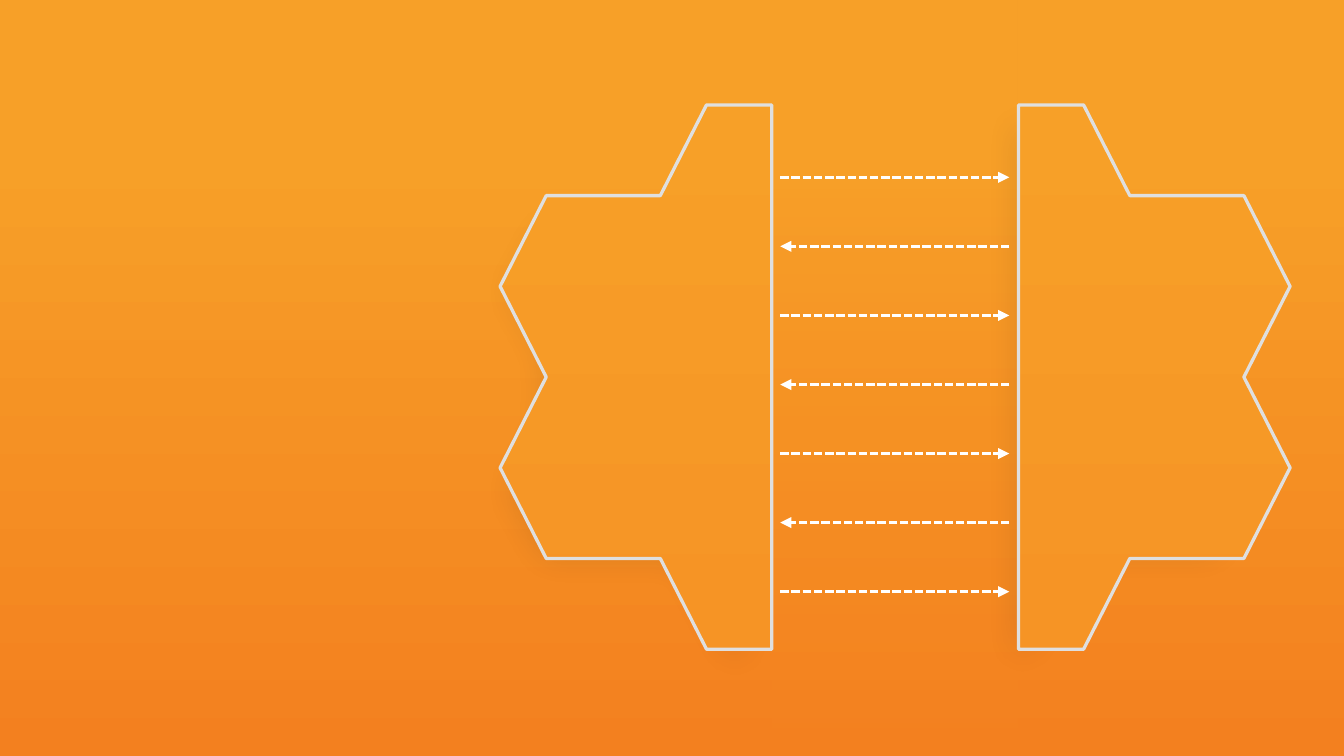
from dataclasses import dataclass

import pptx
import pptx.dml.color
import pptx.enum.dml
import pptx.enum.shapes
import pptx.oxml
import pptx.oxml.ns
import pptx.util

Pt = pptx.util.Pt
qn = pptx.oxml.ns.qn

COLORS = {
    "amber": "F7A028",
    "tangerine": "F69425",
    "orange": "F3801F",
    "outline": "DFDFDF",
    "arrow": "FFFFFF",
    "shadow": "000000",
}
BACKDROP_STOPS = [(2, "amber"), (20, "amber"), (100, "orange")]
GEAR_STOPS = [(0, "amber"), (99, "tangerine")]

# Distance from the flat edge (share of width) and height (sixths), top to bottom
GEAR_PROFILE = [(0, 0), (0.24, 0), (0.41, 1), (0.83, 1), (1, 2), (0.83, 3),
                (1, 4), (0.83, 5), (0.41, 5), (0.24, 6), (0, 6)]

ARROW_COUNT = 7
ARROW_LEFT, ARROW_RIGHT = 418, 540.7
ARROW_TOP, ARROW_STEP = 95, 37


@dataclass
class GearHalf:
    flat_edge: float
    top: float
    width: float
    height: float
    direction: int  # -1 points left, 1 points right


SHADOWS = [GearHalf(414.7, 50.4, 168.5, 319, -1),
           GearHalf(526.3, 48.4, 169.9, 319, 1)]
GEARS = [GearHalf(413.4, 56.2, 145.5, 291.6, -1),
         GearHalf(545.6, 56.2, 145.5, 291.6, 1)]


def rgb(name: str) -> pptx.dml.color.RGBColor:
    return pptx.dml.color.RGBColor.from_string(COLORS[name])


def add_child(parent, tag: str, **attributes):
    child = pptx.oxml.parse_xml(f"<{tag} {pptx.oxml.ns.nsdecls('a')}/>")
    for key, value in attributes.items():
        child.set(key, str(value))
    parent.append(child)
    return child


def set_gradient(fill, owner, stops: list[tuple[int, str]], opacity: int = 100) -> None:
    """Fill from top to bottom; owner is the XML element that holds the fill."""
    fill.gradient()
    fill.gradient_angle = 270
    stop_list = next(owner.iter(qn("a:gsLst")))
    for stop in list(stop_list):
        stop_list.remove(stop)
    for position, name in stops:
        stop = add_child(stop_list, "a:gs", pos=position * 1000)
        color = add_child(stop, "a:srgbClr", val=COLORS[name])
        if opacity < 100:
            add_child(color, "a:alpha", val=opacity * 1000)


def add_gear_half(slide, half: GearHalf):
    points = [(Pt(half.flat_edge + half.direction * share * half.width),
               Pt(half.top + sixths * half.height / 6))
              for share, sixths in GEAR_PROFILE]
    builder = slide.shapes.build_freeform(*points[0])
    builder.add_line_segments(points[1:], close=True)
    shape = builder.convert_to_shape()
    shape.shadow.inherit = False
    return shape


def add_shadow(slide, half: GearHalf) -> None:
    shape = add_gear_half(slide, half)
    shape.line.fill.background()
    shape.fill.solid()
    shape.fill.fore_color.rgb = rgb("shadow")
    add_child(next(shape.element.iter(qn("a:srgbClr"))), "a:alpha", val=10000)
    effects = next(shape.element.iter(qn("a:effectLst")))
    add_child(effects, "a:softEdge", rad=Pt(18))


def add_gear(slide, half: GearHalf) -> None:
    shape = add_gear_half(slide, half)
    set_gradient(shape.fill, shape.element, GEAR_STOPS)
    shape.line.color.rgb = rgb("outline")
    shape.line.width = Pt(1.75)


def add_arrow(slide, start: float, end: float, top: float) -> None:
    arrow = slide.shapes.add_connector(
        pptx.enum.shapes.MSO_CONNECTOR.STRAIGHT, Pt(start), Pt(top), Pt(end), Pt(top))
    arrow.line.color.rgb = rgb("arrow")
    arrow.line.width = Pt(1.5)
    arrow.line.dash_style = pptx.enum.dml.MSO_LINE.SQUARE_DOT
    add_child(next(arrow.element.iter(qn("a:ln"))), "a:tailEnd", type="triangle")
    add_child(arrow.element.spPr, "a:effectLst")


def add_center_band(slide) -> None:
    band = slide.shapes.add_shape(
        pptx.enum.shapes.MSO_SHAPE.RECTANGLE, Pt(414), Pt(0), Pt(131), Pt(405))
    band.shadow.inherit = False
    band.line.fill.background()
    set_gradient(band.fill, band.element, BACKDROP_STOPS, opacity=70)


def main() -> None:
    deck = pptx.Presentation()
    deck.slide_width, deck.slide_height = Pt(720), Pt(405)
    slide = deck.slides.add_slide(deck.slide_layouts[6])
    set_gradient(slide.background.fill, slide.element, BACKDROP_STOPS)

    add_center_band(slide)
    for half in SHADOWS:
        add_shadow(slide, half)
    for index in range(ARROW_COUNT):
        ends = (ARROW_LEFT, ARROW_RIGHT)
        start, end = ends if index % 2 == 0 else ends[::-1]
        add_arrow(slide, start, end, ARROW_TOP + index * ARROW_STEP)
    for half in GEARS:
        add_gear(slide, half)

    deck.save("out.pptx")


if __name__ == "__main__":
    main()
